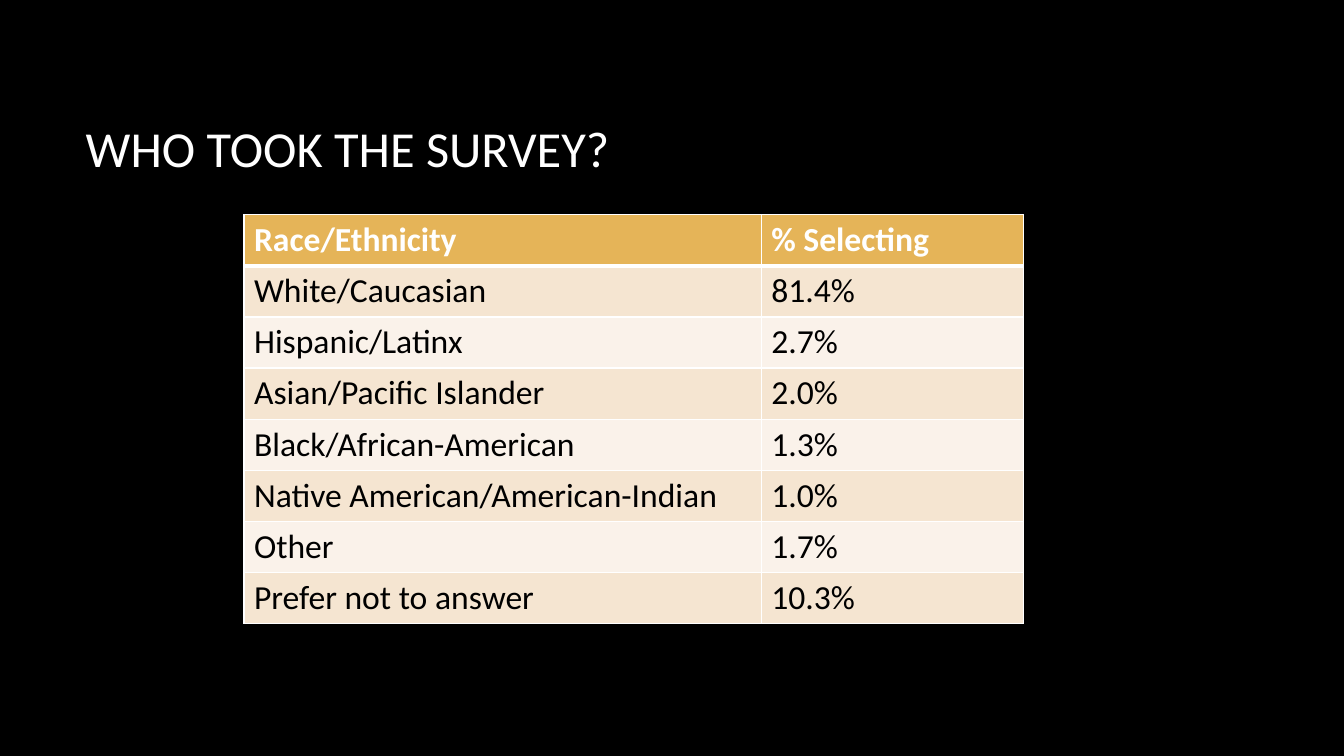
from dataclasses import dataclass

from lxml.etree import SubElement
from pptx import Presentation
from pptx.dml.color import RGBColor
from pptx.enum.text import MSO_ANCHOR, PP_ALIGN
from pptx.oxml.ns import qn
from pptx.util import Inches, Pt


@dataclass(frozen=True)
class Theme:
    """Colours, font and sizes of the slide."""
    back: str = "000000"
    light: str = "FFFFFF"
    dark: str = "000000"
    head: str = "E5B458"
    bands: tuple = ("F5E5D1", "FAF2EA")
    font: str = "Calibri"
    title: int = 36
    body: int = 24
    thin: int = 1
    thick: int = 3


THEME = Theme()
ROWS = [
    ("Race/Ethnicity", "% Selecting"),
    ("White/Caucasian", "81.4%"),
    ("Hispanic/Latinx", "2.7%"),
    ("Asian/Pacific Islander", "2.0%"),
    ("Black/African-American", "1.3%"),
    ("Native American/American-Indian", "1.0%"),
    ("Other", "1.7%"),
    ("Prefer not to answer", "10.3%"),
]
WIDTHS = (5.13, 2.6)
HEIGHT = 0.5


def paint(fill, color):
    """Give a fill one solid colour."""
    fill.solid()
    fill.fore_color.rgb = RGBColor.from_string(color)


def write(frame, text, size, color, bold=False):
    """Add one left-aligned run to the first paragraph of a frame."""
    para = frame.paragraphs[0]
    para.alignment = PP_ALIGN.LEFT
    run = para.add_run()
    run.text = text
    font = run.font
    font.name, font.size, font.bold = THEME.font, Pt(size), bold
    font.color.rgb = RGBColor.from_string(color)


def edge(cell, side, width):
    """Draw one border of a cell."""
    line = SubElement(cell._tc.get_or_add_tcPr(), qn(f"a:ln{side}"), w=str(Pt(width)))
    fill = SubElement(line, qn("a:solidFill"))
    SubElement(fill, qn("a:srgbClr"), val=THEME.light)


def add_title(slide, text):
    """Place and fill the title placeholder."""
    title = slide.shapes.title
    title.left, title.top = Inches(0.75), Inches(0.67)
    title.width, title.height = Inches(11.08), Inches(1.59)
    title.text_frame.vertical_anchor = MSO_ANCHOR.MIDDLE
    write(title.text_frame, text, THEME.title, THEME.light)


def style(cell, text, row):
    """Write, border and fill a cell according to its row."""
    head = row == 0
    write(cell.text_frame, text, THEME.body, THEME.light if head else THEME.dark, head)
    heavy = {(0, "B"), (1, "T")}
    for side in "LRTB":
        edge(cell, side, THEME.thick if (row, side) in heavy else THEME.thin)
    paint(cell.fill, THEME.head if head else THEME.bands[(row - 1) % 2])


def add_grid(slide):
    """Add the table of survey answers."""
    frame = slide.shapes.add_table(
        len(ROWS), len(WIDTHS), Inches(2.42), Inches(2.13),
        Inches(sum(WIDTHS)), Inches(HEIGHT * len(ROWS)))
    table = frame.table
    for col, width in zip(table.columns, WIDTHS):
        col.width = Inches(width)
    for row, texts in enumerate(ROWS):
        for col, text in enumerate(texts):
            style(table.cell(row, col), text, row)


def main():
    """Build and save the slide."""
    deck = Presentation()
    deck.slide_width, deck.slide_height = Inches(13.33), Inches(7.5)
    slide = deck.slides.add_slide(deck.slide_layouts[5])
    paint(slide.background.fill, THEME.back)
    add_title(slide, "WHO TOOK THE SURVEY?")
    add_grid(slide)
    deck.save("out.pptx")


if __name__ == "__main__":
    main()
